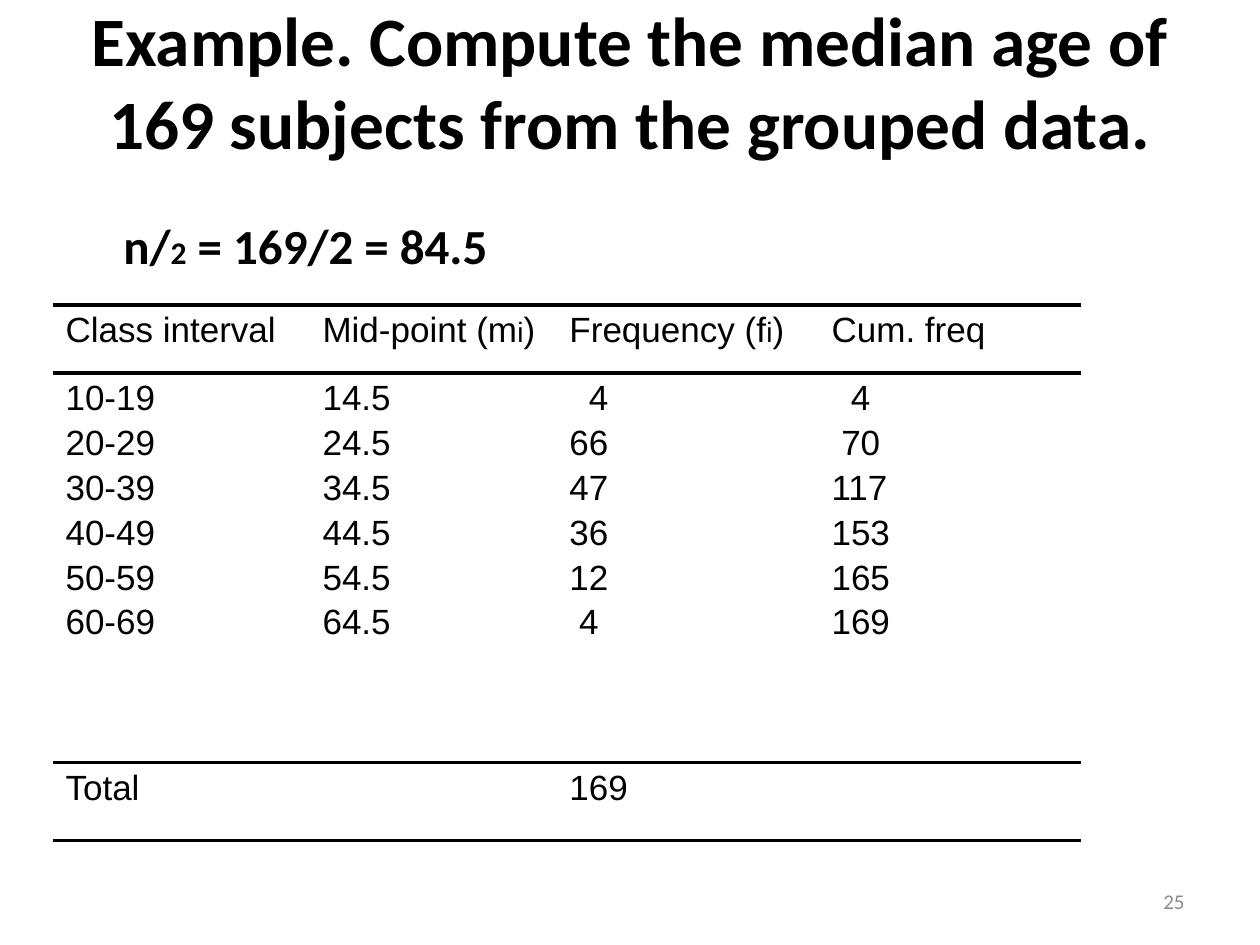
import dataclasses

import pptx
import pptx.dml.color
import pptx.enum.text
import pptx.oxml.ns
import pptx.util
from lxml import etree
from pptx.util import Inches

ALIGN = pptx.enum.text.PP_ALIGN
ANCHOR = pptx.enum.text.MSO_ANCHOR


@dataclasses.dataclass(frozen=True)
class Theme:
    """Fonts, colours and sizes of the slide."""
    heading_font: str = "Calibri"
    table_font: str = "Arial"
    ink: str = "000000"
    muted: str = "8C8C8C"
    title: float = 39.6
    formula: float = 28
    formula_small: float = 18
    table: float = 20
    subscript: float = 16
    page: float = 12
    rule: float = 2.25
    row_gap: float = 3.3
    digit_indent: float = 5.56


THEME = Theme()
COLUMN_WIDTHS = (2.04, 1.96, 2.08, 2.08)
ROW_HEIGHTS = (0.54, 3.09, 0.62)
HEADERS = (
    ["Class interval"],
    ["Mid-point (m", ("i", THEME.subscript), ")"],
    ["Frequency (f", ("i", THEME.subscript), ")"],
    ["Cum. freq"],
)
CLASS_STARTS = range(10, 70, 10)
FREQUENCIES = (4, 66, 47, 36, 12, 4)
CUMULATIVE = (4, 70, 117, 153, 165, 169)
FREQUENCY_INDENTS = (2, 0, 0, 0, 0, 1)
CUMULATIVE_INDENTS = (2, 1, 0, 0, 0, 0)


def write(paragraph, pieces, *, size, font=THEME.heading_font, color=THEME.ink,
          bold=False, align=ALIGN.LEFT, before=0, indent=0):
    """Write pieces, each a string or a (string, size) pair, into a paragraph."""
    paragraph.alignment = align
    paragraph.space_before = pptx.util.Pt(before)
    if indent:
        properties = paragraph._p.get_or_add_pPr()
        properties.set("marL", str(pptx.util.Pt(indent)))
        properties.set("indent", "0")
    for piece in pieces:
        text, points = (piece, size) if isinstance(piece, str) else piece
        run = paragraph.add_run()
        run.text = text
        run.font.name = font
        run.font.size = pptx.util.Pt(points)
        run.font.bold = bold
        run.font.color.rgb = pptx.dml.color.RGBColor.from_string(color)


def add_text(slide, box, pieces, *, anchor=ANCHOR.MIDDLE, left=0.1, top=0.05,
             bottom=0.05, **text_format):
    """Add a wrapped text box with one paragraph."""
    frame = slide.shapes.add_textbox(*map(Inches, box)).text_frame
    frame.word_wrap = True
    frame.vertical_anchor = anchor
    frame.margin_left = Inches(left)
    frame.margin_top = Inches(top)
    frame.margin_bottom = Inches(bottom)
    write(frame.paragraphs[0], pieces, **text_format)


def rule_cell(cell):
    """Draw rules above and below a cell and leave the rest clear."""
    properties = cell._tc.get_or_add_tcPr()
    qn = pptx.oxml.ns.qn
    for side in ("lnL", "lnR", "lnT", "lnB"):
        edge = etree.SubElement(properties, qn(f"a:{side}"))
        if side in ("lnL", "lnR"):
            etree.SubElement(edge, qn("a:noFill"))
        else:
            edge.set("w", str(pptx.util.Pt(THEME.rule)))
            fill = etree.SubElement(edge, qn("a:solidFill"))
            etree.SubElement(fill, qn("a:srgbClr")).set("val", THEME.ink)
    cell.fill.background()


def fill_cell(cell, lines):
    """Write lines, each a (pieces, indent steps) pair, into a cell."""
    frame = cell.text_frame
    for number, (pieces, steps) in enumerate(lines):
        paragraph = frame.add_paragraph() if number else frame.paragraphs[0]
        write(paragraph, pieces, size=THEME.table, font=THEME.table_font,
              before=THEME.row_gap, indent=steps * THEME.digit_indent)


def indented(values, steps):
    """Pair each value with its indent steps."""
    return [([str(value)], step) for value, step in zip(values, steps)]


def add_frequency_table(slide):
    """Add the grouped data with header, classes and total."""
    flush = [0] * len(CLASS_STARTS)
    contents = (
        [[(header, 0)] for header in HEADERS],
        [indented([f"{start}-{start + 9}" for start in CLASS_STARTS], flush),
         indented([start + 4.5 for start in CLASS_STARTS], flush),
         indented(FREQUENCIES, FREQUENCY_INDENTS),
         indented(CUMULATIVE, CUMULATIVE_INDENTS)],
        [[(["Total"], 0)], [], [([str(sum(FREQUENCIES))], 0)], []],
    )
    table = slide.shapes.add_table(
        len(ROW_HEIGHTS), len(COLUMN_WIDTHS), Inches(0.42), Inches(2.42),
        Inches(sum(COLUMN_WIDTHS)), Inches(sum(ROW_HEIGHTS))).table
    table.first_row = False
    table.horz_banding = False
    for column, width in zip(table.columns, COLUMN_WIDTHS):
        column.width = Inches(width)
    for row, height, row_contents in zip(table.rows, ROW_HEIGHTS, contents):
        row.height = Inches(height)
        for cell, lines in zip(row.cells, row_contents):
            rule_cell(cell)
            fill_cell(cell, lines)


def main():
    """Build and save the slide."""
    deck = pptx.Presentation()
    deck.slide_width, deck.slide_height = Inches(10), Inches(7.5)
    slide = deck.slides.add_slide(deck.slide_layouts[6])
    add_text(slide, (0.5, 0.3, 9, 1.25),
             ["Example. Compute the median age of 169 subjects from the grouped data."],
             bottom=0.62, size=THEME.title, bold=True, align=ALIGN.CENTER)
    add_text(slide, (0.5, 1.17, 9, 5.53),
             ["n/", ("2", THEME.formula_small), " = 169/2 = 84.5"],
             anchor=ANCHOR.TOP, left=0.48, top=0.54, size=THEME.formula, bold=True)
    add_frequency_table(slide)
    add_text(slide, (7.17, 6.95, 2.33, 0.4), ["25"],
             size=THEME.page, color=THEME.muted, align=ALIGN.RIGHT)
    deck.save("out.pptx")


if __name__ == "__main__":
    main()
